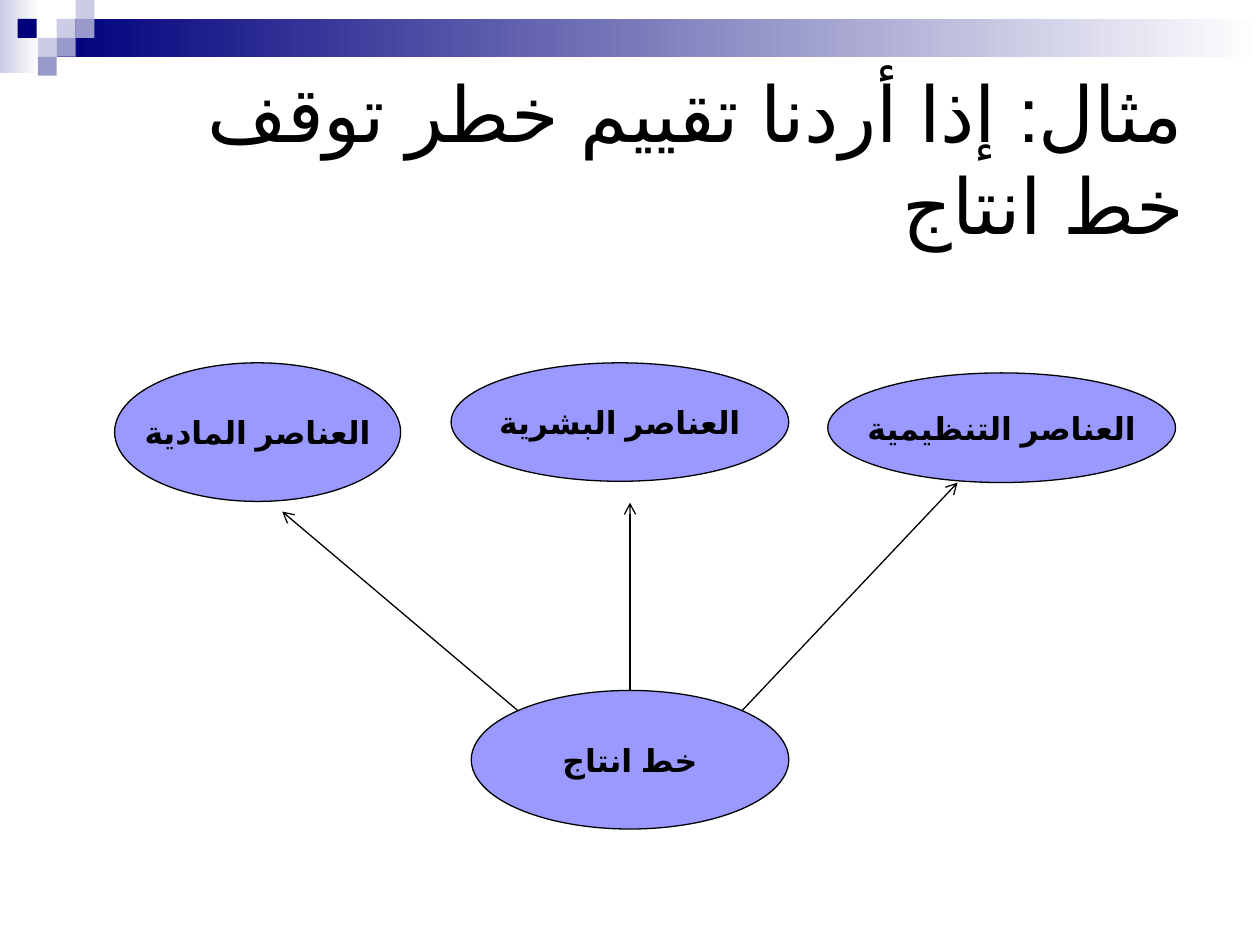
from typing import NamedTuple

from lxml.etree import SubElement
from pptx import Presentation
from pptx.dml.color import RGBColor
from pptx.enum.lang import MSO_LANGUAGE_ID as Language
from pptx.enum.shapes import MSO_CONNECTOR as Connector, MSO_SHAPE as Shape
from pptx.enum.text import MSO_ANCHOR as Anchor, PP_ALIGN as Align
from pptx.oxml.ns import qn
from pptx.util import Inches, Pt

COLORS = {
    "navy": "00007D", "pale": "CCCCE6", "lavender": "9999CC",
    "oval": "9999FF", "black": "000000", "white": "FFFFFF",
}
FONT = "Arial"
TILE = 0.15


class Box(NamedTuple):
    left: float
    top: float
    width: float
    height: float


class Tile(NamedTuple):
    left: float
    row: int
    color: str


class Oval(NamedTuple):
    text: str
    box: Box


class Arrow(NamedTuple):
    start: tuple[float, float]
    end: tuple[float, float]


BANDS = [(Box(0, 0, 0.31, 0.58), "pale"), (Box(0.45, 0.15, 9.55, 0.3), "navy")]
TILES = [
    Tile(0.45, 1, "pale"), Tile(0.6, 0, "pale"), Tile(0.6, 1, "lavender"),
    Tile(0.3, 2, "pale"), Tile(0.14, 1, "navy"), Tile(0.45, 2, "lavender"),
    Tile(0.3, 3, "lavender"),
]
OVALS = [
    Oval("خط انتاج", Box(3.74, 5.48, 2.52, 1.1)),
    Oval("العناصر المادية", Box(0.91, 2.88, 2.27, 1.1)),
    Oval("العناصر البشرية", Box(3.58, 2.88, 2.68, 0.94)),
    Oval("العناصر التنظيمية", Box(6.57, 2.96, 2.76, 0.87)),
]
ARROWS = [
    Arrow((4.11, 5.64), (2.24, 4.06)),
    Arrow((5, 5.48), (5, 3.99)),
    Arrow((5.89, 5.64), (7.6, 3.83)),
]


def rgb(name: str) -> RGBColor:
    return RGBColor.from_string(COLORS[name])


def write(frame, text: str, *, size: float, align: Align, bold: bool = False,
          rtl: bool = False, wrap: bool = True) -> None:
    frame.word_wrap = wrap
    frame.vertical_anchor = Anchor.MIDDLE
    para = frame.paragraphs[0]
    para.alignment = align
    if rtl:
        para._p.get_or_add_pPr().set("rtl", "1")
    span = para.add_run()
    span.text = text
    span.font.language_id = Language.ARABIC
    span.font.size = Pt(size)
    span.font.bold = bold
    span.font.name = FONT
    span.font.color.rgb = rgb("black")
    # Arabic letters use the complex-script font
    SubElement(span._r.get_or_add_rPr(), qn("a:cs"), typeface=FONT)


def add_shape(page, kind: Shape, box: Box):
    shape = page.shapes.add_shape(kind, *map(Inches, box))
    shape.shadow.inherit = False
    return shape


def add_band(page, box: Box, color: str) -> None:
    """Draw a bar that fades to white on the right."""
    band = add_shape(page, Shape.RECTANGLE, box)
    band.line.fill.background()
    band.fill.gradient()
    band.fill.gradient_angle = 0
    for stop, position, name in zip(band.fill.gradient_stops, (0, 1), (color, "white")):
        stop.position = position
        stop.color.rgb = rgb(name)


def add_tile(page, tile: Tile) -> None:
    square = add_shape(page, Shape.RECTANGLE, Box(tile.left, tile.row * TILE, TILE, TILE))
    square.line.fill.background()
    square.fill.solid()
    square.fill.fore_color.rgb = rgb(tile.color)


def add_oval(page, oval: Oval) -> None:
    shape = add_shape(page, Shape.OVAL, oval.box)
    shape.fill.solid()
    shape.fill.fore_color.rgb = rgb("oval")
    shape.line.color.rgb = rgb("black")
    shape.line.width = Pt(0.75)
    write(shape.text_frame, oval.text, size=18, align=Align.CENTER, bold=True, wrap=False)


def add_arrow(page, arrow: Arrow) -> None:
    line = page.shapes.add_connector(
        Connector.STRAIGHT, *map(Inches, arrow.start + arrow.end))
    line.line.color.rgb = rgb("black")
    line.line.width = Pt(0.75)
    SubElement(line.line._get_or_add_ln(), qn("a:tailEnd"), type="arrow")
    SubElement(line._element.spPr, qn("a:effectLst"))


def add_title(page, text: str, box: Box) -> None:
    title = page.shapes.title
    title.left, title.top, title.width, title.height = map(Inches, box)
    write(title.text_frame, text, size=44, align=Align.RIGHT, rtl=True)


def main() -> None:
    deck = Presentation()
    deck.slide_width, deck.slide_height = Inches(10), Inches(7.5)
    page = deck.slides.add_slide(deck.slide_layouts.get_by_name("Title Only"))
    for box, color in BANDS:
        add_band(page, box, color)
    for tile in TILES:
        add_tile(page, tile)
    add_title(page, "مثال: إذا أردنا تقييم خطر توقف خط انتاج", Box(0.5, 0.5, 9, 1.5))
    for arrow in ARROWS:
        add_arrow(page, arrow)
    for oval in OVALS:
        add_oval(page, oval)
    deck.save("out.pptx")


if __name__ == "__main__":
    main()
